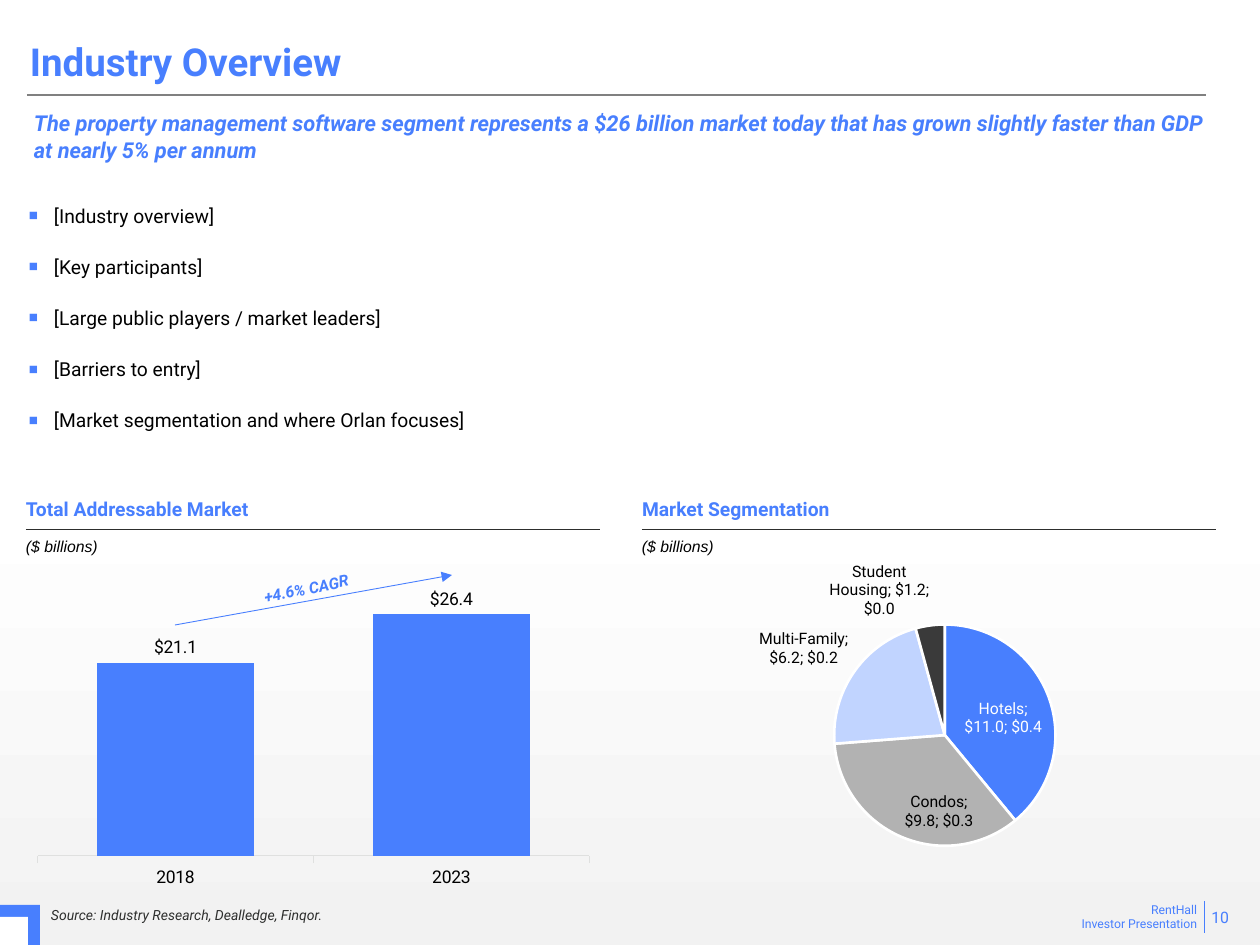
from lxml.etree import SubElement
from pptx import Presentation
from pptx.chart.data import CategoryChartData
from pptx.dml.color import RGBColor
from pptx.enum.chart import XL_CHART_TYPE as CT, XL_LABEL_POSITION as LP, XL_TICK_MARK as TM
from pptx.enum.shapes import MSO_CONNECTOR, MSO_SHAPE
from pptx.enum.text import MSO_ANCHOR as VA, PP_ALIGN as AL
from pptx.oxml import parse_xml
from pptx.oxml.ns import nsdecls, qn
from pptx.util import Emu, Pt

BLUE = RGBColor(0x48, 0x7F, 0xFE)
PALE = RGBColor(0xC1, 0xD4, 0xFF)
SILVER = RGBColor(0xB2, 0xB2, 0xB2)
CHARCOAL = RGBColor(0x3A, 0x3A, 0x3A)
INK = RGBColor(0x2D, 0x2E, 0x2D)
GREY = RGBColor(0x80, 0x80, 0x80)
AXIS = RGBColor(0xDF, 0xE0, 0xDF)
MIST = RGBColor(0xF2, 0xF2, 0xF2)
WHITE = RGBColor(255, 255, 255)
BLACK = RGBColor(0, 0, 0)

FONT = "Roboto"
DOLLARS = '"$"#,##0.0'


def px(n):
    return Emu(round(n * 914400 / 126))


def box(*lengths):
    return [px(n) for n in lengths]


def style(font, size, color, bold=False, italic=False, name=FONT):
    font.size, font.name, font.bold, font.italic = Pt(size), name, bold, italic
    font.color.rgb = color


def add_text(s, area, lines, size, color=BLUE, align=AL.LEFT, anchor=VA.TOP, **kw):
    sp = s.shapes.add_textbox(*box(*area))
    tf = sp.text_frame
    tf.word_wrap = True
    tf.vertical_anchor = anchor
    tf.margin_left = tf.margin_top = tf.margin_right = tf.margin_bottom = 0
    tf.text = "\n".join(lines)
    for p in tf.paragraphs:
        p.alignment = align
        style(p.font, size, color, **kw)
    return sp


def add_bullets(s, area, lines):
    sp = add_text(s, area, lines, 11, BLACK)
    for p in sp.text_frame.paragraphs:
        p.space_before = p.space_after = Pt(8)
        pPr = p._p.get_or_add_pPr()
        pPr.set("marL", str(px(26)))
        pPr.set("indent", str(-px(25)))
        bullet = (
            f'<a:buClr {nsdecls("a")}><a:srgbClr val="{BLUE}"/></a:buClr>',
            f'<a:buSzPct {nsdecls("a")} val="79000"/>',
            f'<a:buFont {nsdecls("a")} typeface="Arial"/>',
            f'<a:buChar {nsdecls("a")} char="■"/>',
        )
        at = pPr.index(pPr.find(qn("a:defRPr")))
        for i, xml in enumerate(bullet):
            pPr.insert(at + i, parse_xml(xml))


def add_line(s, x1, y1, x2, y2, color, width, arrow=False):
    c = s.shapes.add_connector(MSO_CONNECTOR.STRAIGHT, *box(x1, y1, x2, y2))
    c.line.color.rgb = color
    c.line.width = Pt(width)
    if arrow:
        SubElement(c.line._get_or_add_ln(), qn("a:tailEnd"), type="triangle")
    SubElement(c._element.spPr, qn("a:effectLst"))


def add_square(s, top, size, color):
    sp = s.shapes.add_shape(MSO_SHAPE.RECTANGLE, *box(0, top, size, size))
    sp.shadow.inherit = False
    sp.fill.solid()
    sp.fill.fore_color.rgb = color
    sp.line.fill.background()


def add_panel_header(s, left, title):
    add_text(s, (left, 495, 574, 25), [title], 11, anchor=VA.BOTTOM, bold=True)
    add_line(s, left, 529, left + 574, 529, INK, 0.5)
    add_text(s, (left, 537, 227, 20), ["($ billions)"], 9, BLACK, italic=True, name="Arial")


def set_plot_area(chart, x, y, w, h):
    area = chart._chartSpace.chart.plotArea
    for old in area.findall(qn("c:layout")):
        area.remove(old)
    sizes = "".join(f'<c:{k} val="{v}"/>' for k, v in zip("xywh", (x, y, w, h)))
    area.insert(0, parse_xml(
        f'<c:layout {nsdecls("c")}><c:manualLayout><c:layoutTarget val="inner"/>'
        f'<c:xMode val="edge"/><c:yMode val="edge"/>{sizes}</c:manualLayout></c:layout>'))


def add_chart(s, kind, area, cats, vals, size, plot_area):
    data = CategoryChartData(number_format=DOLLARS)
    data.categories = cats
    data.add_series("Series 1", vals)
    chart = s.shapes.add_chart(kind, *box(*area), data).chart
    chart.has_legend = chart.has_title = False
    style(chart.font, size, BLACK)
    set_plot_area(chart, *plot_area)
    return chart


def add_market_columns(s):
    chart = add_chart(s, CT.COLUMN_CLUSTERED, (26, 575, 575, 319),
                      ["2018", "2023"], [21.1, 26.4], 10, (0.02, 0.02, 0.96, 0.86))
    plot = chart.plots[0]
    plot.gap_width, plot.overlap, plot.vary_by_categories = 75, -27, False
    fill = plot.series[0].format.fill
    fill.solid()
    fill.fore_color.rgb = BLUE
    value = chart.value_axis
    value.minimum_scale, value.maximum_scale = 0, 30
    value.has_major_gridlines = value.visible = False
    cat = chart.category_axis
    cat.major_tick_mark = TM.OUTSIDE
    cat.format.line.color.rgb = AXIS
    cat.format.line.width = Pt(0.75)
    plot.has_data_labels = True
    labels = plot.data_labels
    labels.show_value = True
    labels.number_format, labels.number_format_is_linked = DOLLARS, False
    labels.position = LP.OUTSIDE_END
    style(labels.font, 10, BLACK)


def label_slice(point, color, position):
    label = point.data_label
    style(label.font, 9, color)
    label.position = position
    d = label._dLbl
    d.insert(1, parse_xml(f"<c:numFmt {nsdecls('c')} formatCode='{DOLLARS}' sourceLinked='0'/>"))
    for tag in ("c:showCatName", "c:showPercent"):
        d.find(qn(tag)).set("val", "1")
    SubElement(d, qn("c:separator")).text = "; "


def add_segment_pie(s):
    slices = [
        ("Hotels", 11, BLUE, WHITE, LP.INSIDE_END),
        ("Condos", 9.8, SILVER, BLACK, LP.INSIDE_END),
        ("Multi-Family", 6.2, PALE, BLACK, LP.OUTSIDE_END),
        ("Student Housing", 1.2, CHARCOAL, BLACK, LP.OUTSIDE_END),
    ]
    chart = add_chart(s, CT.PIE, (643, 546, 575, 357), [c[0] for c in slices],
                      [c[1] for c in slices], 9, (0.33, 0.22, 0.39, 0.62))
    series = chart.plots[0].series[0]
    for i, (_, _, fill, ink, position) in enumerate(slices):
        point = series.points[i]
        point.format.fill.solid()
        point.format.fill.fore_color.rgb = fill
        point.format.line.color.rgb = WHITE
        point.format.line.width = Pt(1.5)
        label_slice(point, ink, position)


def set_background(s):
    fill = s.background.fill
    fill.gradient()
    fill.gradient_angle = 270
    for stop, position, color in zip(fill.gradient_stops, (0.53, 1), (WHITE, MIST)):
        stop.position = position
        stop.color.rgb = color


def add_frame(s):
    add_text(s, (1050, 902, 147, 32), ["RentHall", "Investor Presentation"], 7, align=AL.RIGHT)
    add_line(s, 1204, 901, 1204, 933, BLUE, 0.5)
    add_text(s, (1160, 902, 69, 30), ["10"], 9, align=AL.RIGHT, anchor=VA.MIDDLE)
    add_line(s, 27, 95, 1206, 95, GREY, 1.5)
    add_square(s, 905, 40, BLUE)
    add_square(s, 917, 28, WHITE)


def main():
    prs = Presentation()
    prs.slide_width, prs.slide_height = box(1260, 945)
    s = prs.slides.add_slide(prs.slide_layouts[6])
    set_background(s)
    add_frame(s)
    title = add_text(s, (30, 31, 980, 54), ["Industry Overview"], 22, anchor=VA.BOTTOM, bold=True)
    title.text_frame.paragraphs[0].line_spacing = 0.9
    add_text(s, (34, 110, 1185, 60), [
        "The property management software segment represents a $26 billion market today "
        "that has grown slightly faster than GDP at nearly 5% per annum"],
        12.5, bold=True, italic=True)
    add_bullets(s, (28, 204, 1188, 231), [
        "[Industry overview]", "[Key participants]", "[Large public players / market leaders]",
        "[Barriers to entry]", "[Market segmentation and where Orlan focuses]"])
    add_panel_header(s, 26, "Total Addressable Market")
    add_panel_header(s, 642, "Market Segmentation")
    add_market_columns(s)
    add_line(s, 175, 625, 452, 575, BLUE, 0.5, arrow=True)
    cagr = add_text(s, (193, 579, 227, 21), ["+4.6% CAGR"], 9, align=AL.CENTER,
                    bold=True, italic=True)
    cagr.rotation = 348.3
    add_segment_pie(s)
    add_text(s, (51, 905, 925, 18), ["Source: Industry Research, Dealledge, Finqor."], 8, INK,
             anchor=VA.BOTTOM, italic=True)
    prs.save("out.pptx")


if __name__ == "__main__":
    main()
